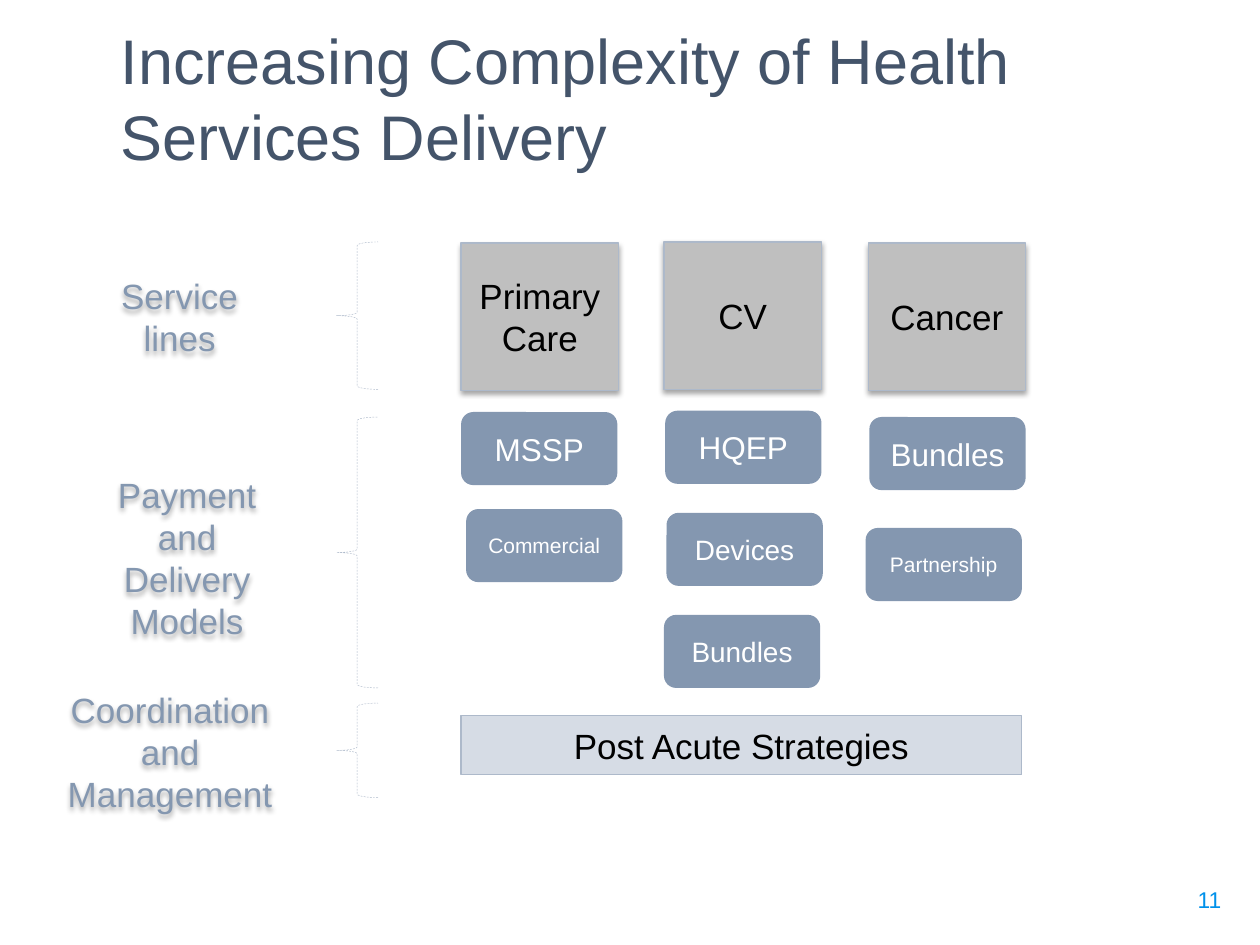
from lxml import etree
from pptx import Presentation
from pptx.dml.color import RGBColor
from pptx.enum.dml import MSO_LINE
from pptx.enum.shapes import MSO_SHAPE
from pptx.enum.text import MSO_ANCHOR, PP_ALIGN
from pptx.oxml import parse_xml
from pptx.util import Inches, Pt

SHADOW = (
    '<a:effectLst xmlns:a="http://schemas.openxmlformats.org/drawingml/2006/main">'
    '<a:outerShdw blurRad="39370" dist="22860" dir="5400000" rotWithShape="0">'
    '<a:srgbClr val="000000"><a:alpha val="35000"/></a:srgbClr>'
    '</a:outerShdw></a:effectLst>'
)


def add_box(place, text, size, color, kind=None, fill=None, line=None,
            shadow=False, align=PP_ALIGN.CENTER, anchor=MSO_ANCHOR.MIDDLE):
    """Add a text box, or a preset shape when a kind is given."""
    place = [Inches(value) for value in place]
    if kind is None:
        box = page.shapes.add_textbox(*place)
    else:
        box = page.shapes.add_shape(kind, *place)
        box.shadow.inherit = False
        if fill:
            box.fill.solid()
            box.fill.fore_color.rgb = RGBColor.from_string(fill)
        else:
            box.fill.background()
        if line:
            box.line.color.rgb = RGBColor.from_string(line)
            box.line.width = Pt(0.75)
        else:
            box.line.fill.background()
    if shadow:
        properties = box._element.spPr
        for effects in properties.findall("{*}effectLst"):
            properties.remove(effects)
        properties.append(parse_xml(SHADOW))
    frame = box.text_frame
    frame.word_wrap = True
    frame.vertical_anchor = anchor
    frame.text = text
    paragraph = frame.paragraphs[0]
    paragraph.alignment = align
    for span in paragraph.runs:
        span.font.name = "Arial"
        span.font.size = Pt(size)
        span.font.color.rgb = RGBColor.from_string(color)
    return box


deck = Presentation()
deck.slide_width, deck.slide_height = Inches(10), Inches(7.5)
page = deck.slides.add_slide(deck.slide_layouts[6])

# Title and page number
title = add_box((0.86, 0.45, 8.28, 1.02), "Increasing Complexity of Health Services Delivery",
                36, "44546A", align=PP_ALIGN.LEFT, anchor=MSO_ANCHOR.BOTTOM)
number = add_box((9.19, 6.93, 0.6, 0.57), "11", 13, "0091EA",
                 align=PP_ALIGN.RIGHT, anchor=MSO_ANCHOR.TOP)
for box in (title, number):
    box.text_frame.margin_top = box.text_frame.margin_bottom = Inches(0.1)

# Service lines
for left, top, text in [(3.66, 1.93, "Primary Care"), (5.27, 1.92, "CV"), (6.89, 1.93, "Cancer")]:
    add_box((left, top, 1.25, 1.17), text, 20, "000000", MSO_SHAPE.RECTANGLE,
            "BFBFBF", "ADB9CA", shadow=True)

# Payment and delivery models
models = [
    (3.66, 3.27, "MSSP", 18), (3.7, 4.04, "Commercial", 12),
    (5.28, 3.26, "HQEP", 18), (5.29, 4.07, "Devices", 16), (5.27, 4.88, "Bundles", 16),
    (6.9, 3.31, "Bundles", 18), (6.87, 4.19, "Partnership", 12),
]
for left, top, text, size in models:
    add_box((left, top, 1.24, 0.58), text, size, "FFFFFF", MSO_SHAPE.ROUNDED_RECTANGLE, "8497B0")

# Coordination bar
add_box((3.66, 5.68, 4.45, 0.47), "Post Acute Strategies", 20, "000000",
        MSO_SHAPE.RECTANGLE, "D6DCE5", "ADB9CA")

# Row labels with their braces
rows = [
    ("Service lines", 0.8, 1.93, 1.25, 1.92, 1.17),
    ("Payment and Delivery Models", 0.65, 3.84, 1.67, 3.31, 2.15),
    ("Coordination and Management", 0.38, 5.38, 1.94, 5.58, 0.75),
]
for text, left, top, width, brace_top, brace_height in rows:
    add_box((left, top, width, 1.17), text, 20, "8497B0", shadow=True)
    brace = add_box((2.67, brace_top, 0.33, brace_height), "", 20, "000000",
                    MSO_SHAPE.RIGHT_BRACE, line="ADB9CA")
    brace.rotation = 180
    brace.line.width = Pt(0.25)
    brace.line.dash_style = MSO_LINE.DASH

deck.save("out.pptx")
